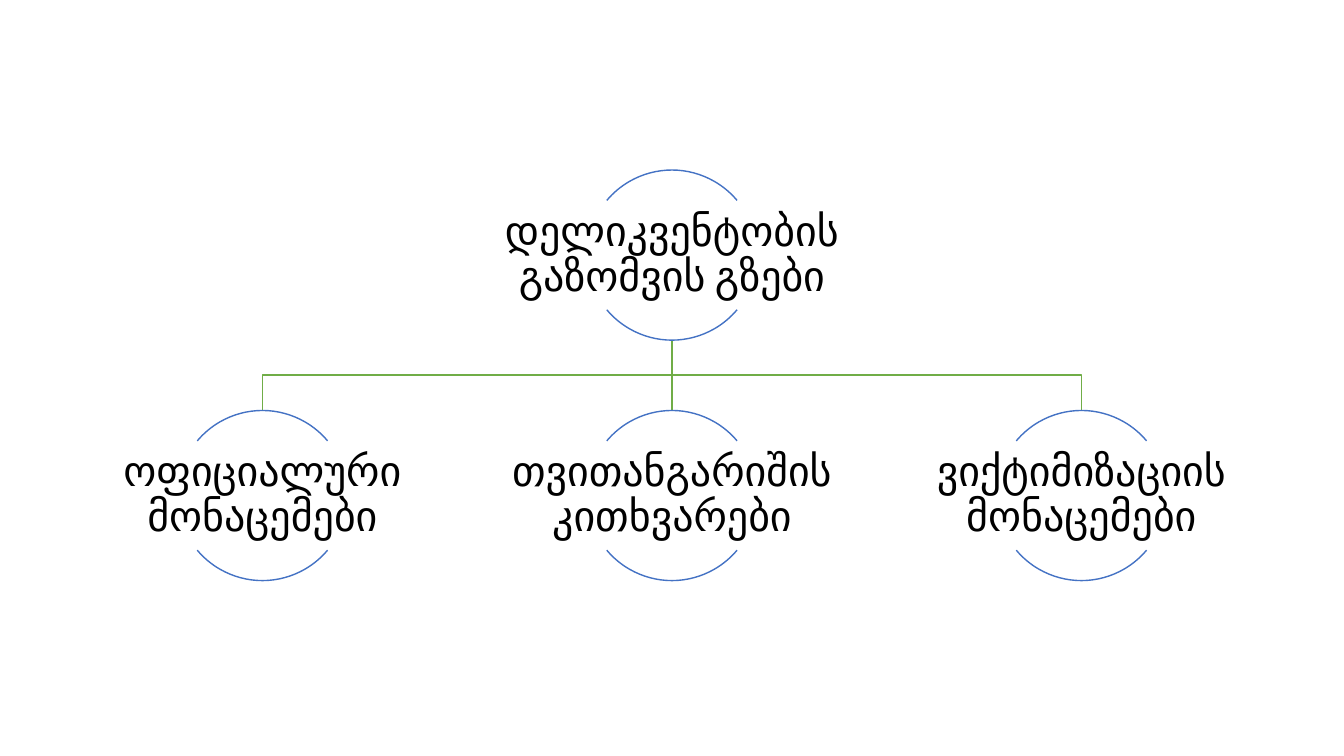
from dataclasses import dataclass

from lxml.etree import SubElement
from pptx import Presentation
from pptx.dml.color import RGBColor
from pptx.enum.shapes import MSO_CONNECTOR as Connector, MSO_SHAPE as Shape
from pptx.enum.text import MSO_ANCHOR as Anchor, PP_ALIGN as Align
from pptx.oxml.ns import qn
from pptx.shapes.shapetree import SlideShapes
from pptx.util import Emu, Pt

BLACK = RGBColor(0x00, 0x00, 0x00)
BLUE = RGBColor(0x44, 0x72, 0xC4)
GREEN = RGBColor(0x70, 0xAD, 0x47)

FONT = "Calibri"
CIRCLE = 162
TEXT_W, TEXT_H = 326, 104
INSET = 2
CENTER = 640
COLUMN_STEP = 390
ROOT_TOP, CHILD_TOP = 162, 391
ARC_ANGLES = ((132, 192), (24, 84))


@dataclass(frozen=True)
class Node:
    text: str
    center: int
    top: int


ROOT = Node("დელიკვენტობის გაზომვის გზები", CENTER, ROOT_TOP)
CHILD_TEXTS = (
    "ოფიციალური მონაცემები",
    "თვითანგარიშის კითხვარები",
    "ვიქტიმიზაციის მონაცემები",
)
CHILDREN = [
    Node(text, CENTER + (i - 1) * COLUMN_STEP, CHILD_TOP)
    for i, text in enumerate(CHILD_TEXTS)
]


def px(n: int) -> Emu:
    return Emu(n * 9525)


def draw_link(shapes: SlideShapes, parent: Node, child: Node) -> None:
    start, end = parent.top + CIRCLE, child.top
    if parent.center == child.center:
        s = shapes.add_connector(
            Connector.STRAIGHT, px(parent.center), px(start), px(child.center), px(end)
        )
        SubElement(s._element.spPr, qn("a:effectLst"))
    else:
        middle = (start + end) // 2
        corners = ((parent.center, middle), (child.center, middle), (child.center, end))
        builder = shapes.build_freeform(px(parent.center), px(start))
        builder.add_line_segments([(px(x), px(y)) for x, y in corners], close=False)
        s = builder.convert_to_shape()
        s.fill.background()
        s.shadow.inherit = False
    s.line.color.rgb = GREEN
    s.line.width = Pt(1)


def draw_node(shapes: SlideShapes, node: Node) -> None:
    for angles in ARC_ANGLES:
        s = shapes.add_shape(
            Shape.ARC, px(node.center - CIRCLE // 2), px(node.top), px(CIRCLE), px(CIRCLE)
        )
        s.adjustments[0], s.adjustments[1] = angles
        s.fill.background()
        s.line.color.rgb = BLUE
        s.line.width = Pt(1)
        s.shadow.inherit = False

    s = shapes.add_textbox(
        px(node.center - TEXT_W // 2),
        px(node.top + (CIRCLE - TEXT_H) // 2),
        px(TEXT_W),
        px(TEXT_H),
    )
    tf = s.text_frame
    tf.text = node.text
    tf.word_wrap = True
    tf.vertical_anchor = Anchor.MIDDLE
    tf.margin_left = tf.margin_right = tf.margin_top = tf.margin_bottom = px(INSET)
    p = tf.paragraphs[0]
    p.alignment = Align.CENTER
    p.line_spacing = 0.9
    r = p.runs[0]
    r.font.name = FONT
    r.font.size = Pt(30)
    r.font.color.rgb = BLACK


def main() -> None:
    prs = Presentation()
    prs.slide_width, prs.slide_height = px(1280), px(720)
    shapes = prs.slides.add_slide(prs.slide_layouts[6]).shapes
    for child in reversed(CHILDREN):
        draw_link(shapes, ROOT, child)
    for node in (ROOT, *CHILDREN):
        draw_node(shapes, node)
    prs.save("out.pptx")


if __name__ == "__main__":
    main()
